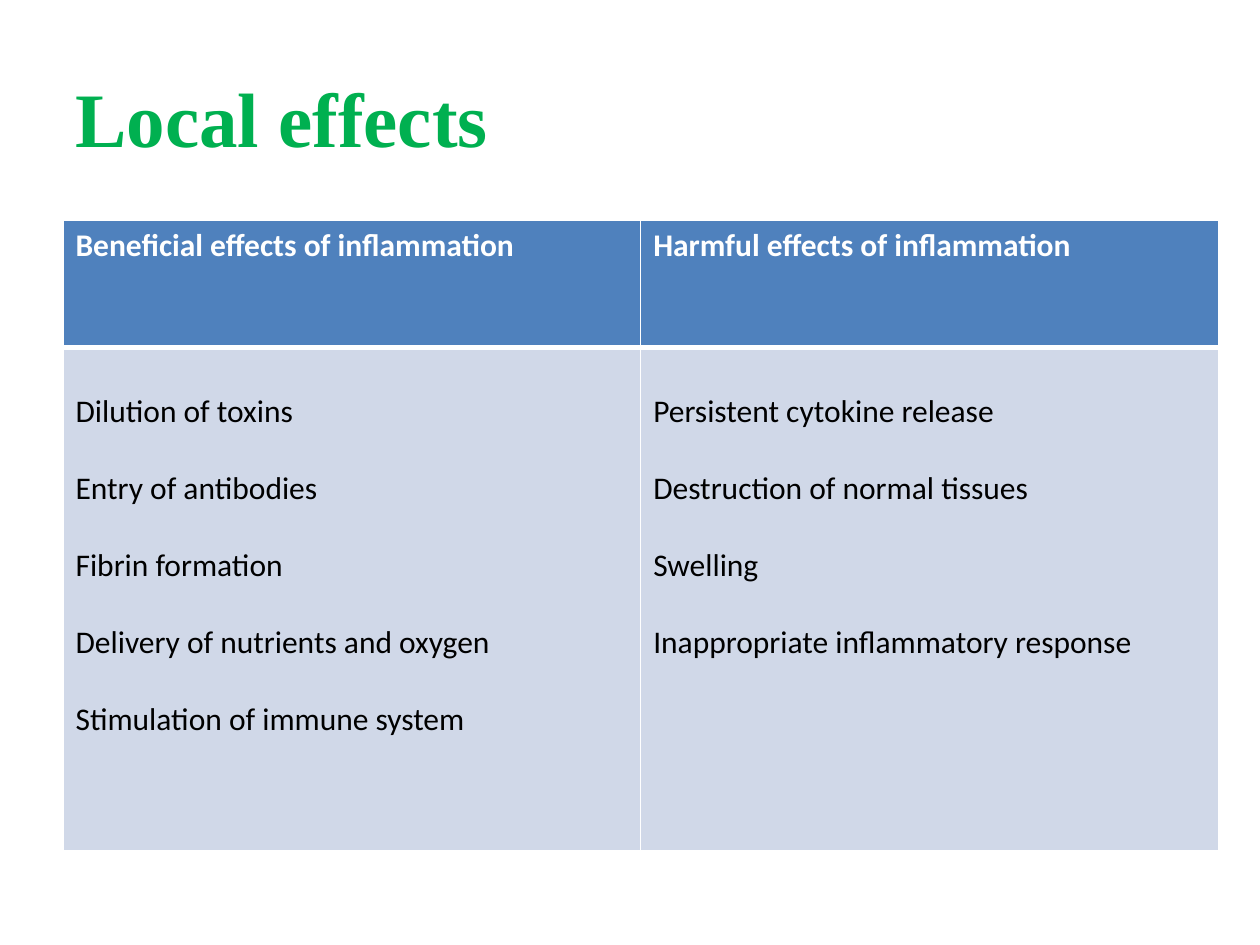
import pptx
import pptx.dml.color
import pptx.enum.text
import pptx.oxml
import pptx.oxml.ns
import pptx.util

Inches = pptx.util.Inches

COLORS = {
    "title": "00B050",
    "header": "4F81BD",
    "body": "D0D8E8",
    "white": "FFFFFF",
    "black": "000000",
}

TITLE_FORMAT = {"name": "Times New Roman", "size": pptx.util.Pt(44), "bold": True}
HEADER_FORMAT = {"name": "Calibri", "size": pptx.util.Pt(18), "bold": True}
BODY_FORMAT = {**HEADER_FORMAT, "bold": False}

EFFECTS = {
    "Beneficial effects of inflammation": [
        "Dilution of toxins",
        "Entry of antibodies",
        "Fibrin formation",
        "Delivery of nutrients and oxygen",
        "Stimulation of immune system",
    ],
    "Harmful effects of inflammation": [
        "Persistent cytokine release",
        "Destruction of normal tissues",
        "Swelling",
        "Inappropriate inflammatory response",
    ],
}


class SlideBuilder:
    """Holds the colours and the current slide."""

    def __init__(self, slide, colors):
        self.slide = slide
        self.colors = colors

    def color(self, key):
        return pptx.dml.color.RGBColor.from_string(self.colors[key])

    def add_lines(self, text_frame, lines, font_format, color, **paragraph_format):
        for index, line in enumerate(lines):
            paragraph = text_frame.paragraphs[0] if index == 0 else text_frame.add_paragraph()
            for name, value in paragraph_format.items():
                setattr(paragraph, name, value)
            run = paragraph.add_run()
            run.text = line
            for name, value in font_format.items():
                setattr(run.font, name, value)
            run.font.color.rgb = self.color(color)

    def title(self, text, left, top, width, height):
        shape = self.slide.shapes.add_textbox(left, top, width, height)
        shape.text_frame.word_wrap = True
        shape.text_frame.vertical_anchor = pptx.enum.text.MSO_ANCHOR.MIDDLE
        self.add_lines(shape.text_frame, [text], TITLE_FORMAT, "title",
                       alignment=pptx.enum.text.PP_ALIGN.JUSTIFY)

    def borders(self, cell, widths):
        properties = cell._tc.get_or_add_tcPr()
        for side, points in zip("LRTB", widths):
            properties.append(pptx.oxml.parse_xml(
                f'<a:ln{side} {pptx.oxml.ns.nsdecls("a")} w="{pptx.util.Pt(points)}">'
                f'<a:solidFill><a:srgbClr val="{self.colors["white"]}"/></a:solidFill>'
                f'</a:ln{side}>'))

    def cell(self, cell, lines, fill, border_widths, font_format, color, **paragraph_format):
        # Borders come before the fill in the cell properties
        self.borders(cell, border_widths)
        cell.fill.solid()
        cell.fill.fore_color.rgb = self.color(fill)
        self.add_lines(cell.text_frame, lines, font_format, color, **paragraph_format)

    def table(self, effects, left, top, width, row_heights):
        shape = self.slide.shapes.add_table(
            len(row_heights), len(effects), left, top, width, sum(row_heights))
        table = shape.table
        table.horz_banding = False
        for row, height in zip(table.rows, row_heights):
            row.height = height
        for column, (heading, items) in enumerate(effects.items()):
            self.cell(table.cell(0, column), [heading], "header", (1, 1, 1, 3),
                      HEADER_FORMAT, "white")
            self.cell(table.cell(1, column), items, "body", (1, 1, 3, 1),
                      BODY_FORMAT, "black", line_spacing=2.0)


def main():
    presentation = pptx.Presentation()
    presentation.slide_width = Inches(10)
    presentation.slide_height = Inches(7.5)
    slide = presentation.slides.add_slide(presentation.slide_layouts[6])
    builder = SlideBuilder(slide, COLORS)

    # Title
    builder.title("Local effects", Inches(0.5), Inches(0.3), Inches(9), Inches(1.25))

    # Beneficial and harmful effects side by side
    builder.table(EFFECTS, Inches(0.5), Inches(1.75), Inches(9.17),
                  [Inches(1.01), Inches(3.99)])

    presentation.save("out.pptx")


if __name__ == "__main__":
    main()
